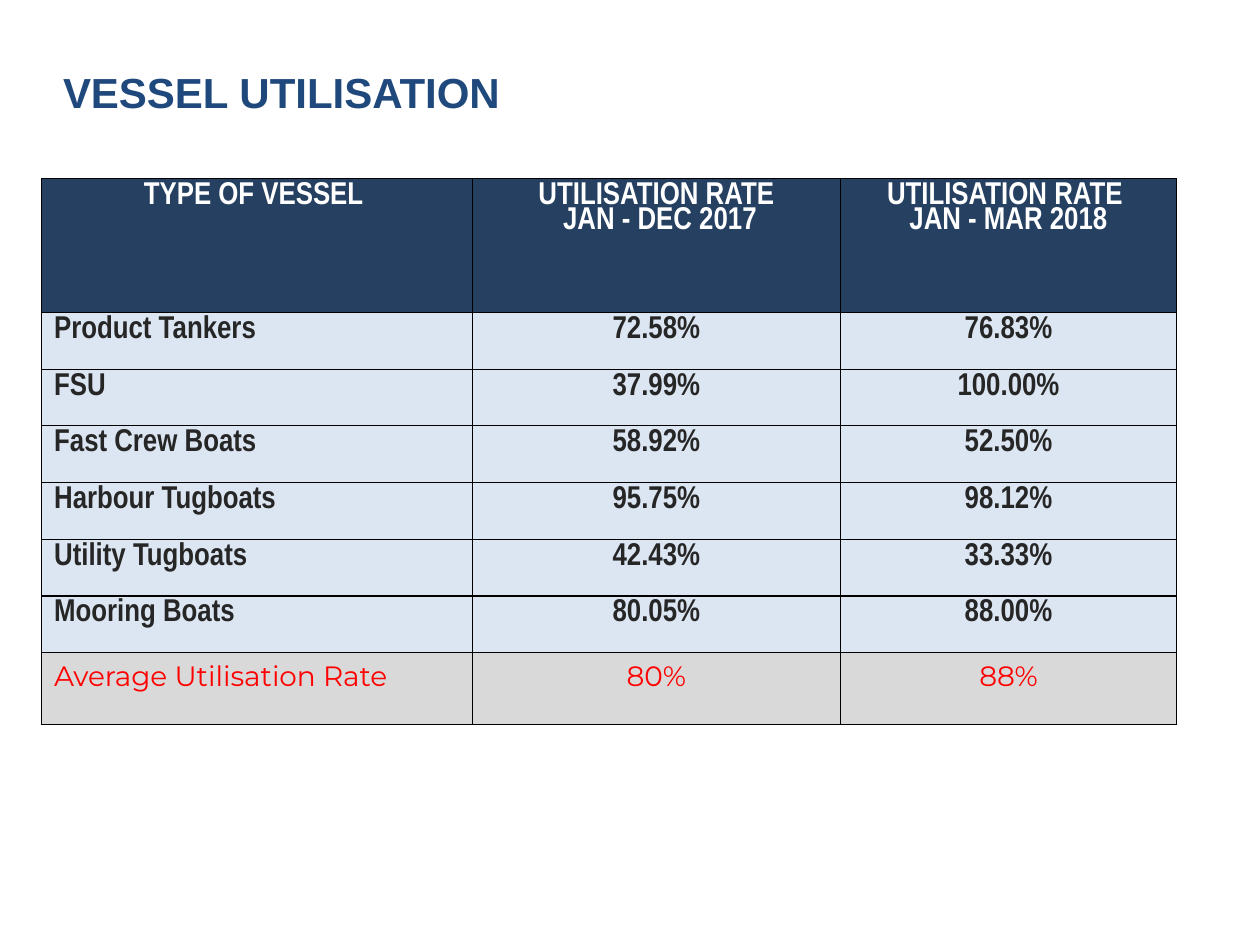
import lxml.etree
import pptx
import pptx.dml.color
import pptx.enum.text
import pptx.oxml.ns
import pptx.util

Inches, Pt = pptx.util.Inches, pptx.util.Pt
ALIGN = pptx.enum.text.PP_ALIGN
COLORS = {
    "title": "1F487C", "border": "000000",
    "head_fill": "254061", "head_text": "FFFFFF",
    "body_fill": "DCE6F2", "body_text": "262626",
    "total_fill": "D9D9D9", "total_text": "FF0000",
}
# Row styles: font, size, bold, line spacing
STYLES = {
    "head": ("Arial Narrow", 18, True, 0.83),
    "body": ("Arial Narrow", 18, True, 0.83),
    "total": ("Montserrat", 16, False, 1.0),
}
COLUMN_WIDTHS = [3.42, 2.92, 2.67]
ROW_HEIGHTS = {"head": 1.06, "body": 0.45, "total": 0.57}
ROWS = [
    ("head", "TYPE OF VESSEL ", "UTILISATION RATE\n JAN - DEC 2017",
     "UTILISATION RATE \nJAN - MAR 2018"),
    ("body", "Product Tankers", "72.58%", "76.83%"),
    ("body", "FSU", "37.99%", "100.00%"),
    ("body", "Fast Crew Boats", "58.92%", "52.50%"),
    ("body", "Harbour Tugboats", "95.75%", "98.12%"),
    ("body", "Utility Tugboats", "42.43%", "33.33%"),
    ("body", "Mooring Boats", "80.05%", "88.00%"),
    ("total", "Average Utilisation Rate", "80%", "88%"),
]


def rgb(name):
    return pptx.dml.color.RGBColor.from_string(COLORS[name])


def set_font(para, family, size, bold, color):
    para.font.name = family
    para.font.size = Pt(size)
    para.font.bold = bold
    para.font.color.rgb = rgb(color)


def add_title(page, text, left, top, width, height):
    title = page.shapes.title
    title.left, title.top = Inches(left), Inches(top)
    title.width, title.height = Inches(width), Inches(height)
    frame = title.text_frame
    frame.margin_left = frame.margin_right = 0
    frame.margin_top = frame.margin_bottom = 0
    frame.vertical_anchor = pptx.enum.text.MSO_ANCHOR.TOP
    frame.text = text
    para = frame.paragraphs[0]
    para.alignment = ALIGN.LEFT
    set_font(para, "Arial", 24, True, "title")


def add_borders(cell, width=0.75):
    properties = cell._tc.get_or_add_tcPr()
    qn = pptx.oxml.ns.qn
    for index, side in enumerate(("lnL", "lnR", "lnT", "lnB")):
        line = lxml.etree.Element(qn(f"a:{side}"), w=str(Pt(width)))
        fill = lxml.etree.SubElement(line, qn("a:solidFill"))
        lxml.etree.SubElement(fill, qn("a:srgbClr"), val=COLORS["border"])
        properties.insert(index, line)


def fill_cell(cell, text, kind, centred):
    family, size, bold, spacing = STYLES[kind]
    cell.text = text
    cell.fill.solid()
    cell.fill.fore_color.rgb = rgb(f"{kind}_fill")
    add_borders(cell)
    for para in cell.text_frame.paragraphs:
        para.alignment = ALIGN.CENTER if centred else ALIGN.LEFT
        para.line_spacing = spacing
        set_font(para, family, size, bold, f"{kind}_text")


def add_utilisation_table(page, left, top):
    heights = [ROW_HEIGHTS[row[0]] for row in ROWS]
    table = page.shapes.add_table(
        len(ROWS), len(COLUMN_WIDTHS), Inches(left), Inches(top),
        Inches(sum(COLUMN_WIDTHS)), Inches(sum(heights))).table
    table.horz_banding = False
    for column, width in zip(table.columns, COLUMN_WIDTHS):
        column.width = Inches(width)
    for row, height, (kind, *texts) in zip(table.rows, heights, ROWS):
        row.height = Inches(height)
        for index, (cell, text) in enumerate(zip(row.cells, texts)):
            fill_cell(cell, text, kind, centred=kind == "head" or index > 0)


def main():
    deck = pptx.Presentation()
    deck.slide_width, deck.slide_height = Inches(10), Inches(7.5)
    page = deck.slides.add_slide(deck.slide_layouts.get_by_name("Title Only"))
    add_title(page, "VESSEL UTILISATION", 0.5, 0.53, 6.57, 0.4)
    add_utilisation_table(page, 0.33, 1.42)
    deck.save("out.pptx")


if __name__ == "__main__":
    main()
